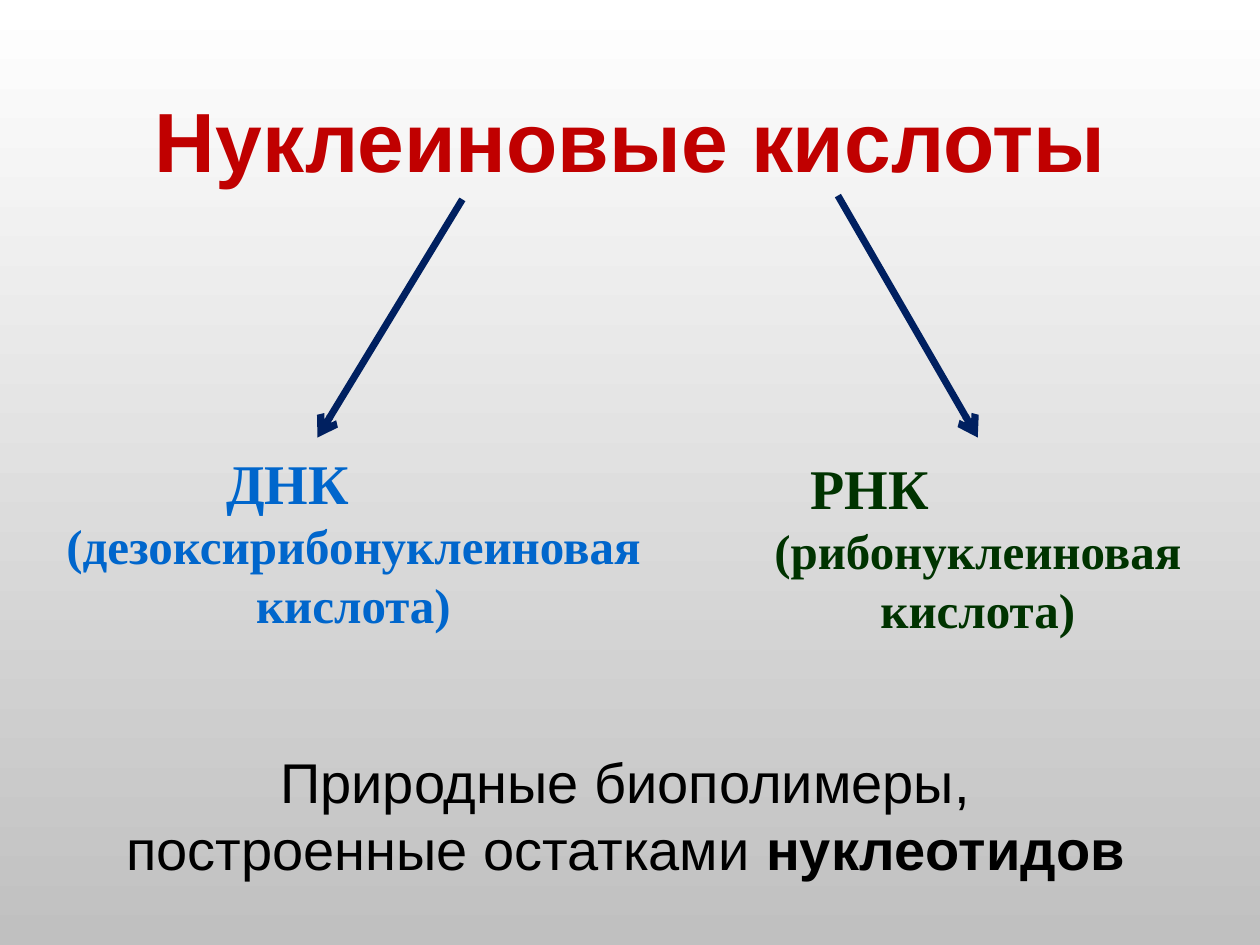
from lxml import etree
from pptx import Presentation
from pptx.dml.color import RGBColor
from pptx.enum.shapes import MSO_CONNECTOR
from pptx.enum.text import MSO_ANCHOR, PP_ALIGN
from pptx.oxml.ns import qn
from pptx.util import Inches, Pt

LINE = MSO_CONNECTOR.STRAIGHT
MID, TOP = MSO_ANCHOR.MIDDLE, MSO_ANCHOR.TOP
CENTER = PP_ALIGN.CENTER
WIDE, HIGH = 10, 7.5
SANS, SERIF = "Arial", "Times New Roman"
HANG = 0.37
HUES = {
    "light": "FFFFFF", "dark": "C0C0C0", "title": "C00000", "arrow": "002060",
    "dna": "0066CC", "rna": "003300", "text": "000000",
}


def color(name):
    return RGBColor.from_string(HUES[name])


def paint(slide):
    fill = slide.background.fill
    fill.gradient()
    fill.gradient_angle = 270
    for stop, name in zip(fill.gradient_stops, ("light", "dark")):
        stop.color.rgb = color(name)


def frame(slide, box, anchor=TOP):
    left, top, width, height = box
    shape = slide.shapes.add_textbox(
        Inches(left * WIDE), Inches(top * HIGH),
        Inches(width * WIDE), Inches(height * HIGH))
    body = shape.text_frame
    body.word_wrap = True
    body.vertical_anchor = anchor
    return body


def center(para, left=0, right=0):
    para.alignment = CENTER
    props = para._p.get_or_add_pPr()
    props.set("marL", str(Inches(left)))
    props.set("marR", str(Inches(right)))
    props.set("indent", "0")


def write(para, text, size, face, hue, bold=True):
    run = para.add_run()
    run.text = text
    font = run.font
    font.size, font.name, font.bold = Pt(size), face, bold
    font.color.rgb = color(hue)


def title(slide, box):
    para = frame(slide, box, MID).paragraphs[0]
    center(para)
    write(para, "Нуклеиновые кислоты", 48, SANS, "title")


def acid(slide, box, short, full, hue, shift):
    body = frame(slide, box)
    head = body.paragraphs[0]
    center(head, right=shift)
    write(head, short, 32, SERIF, hue)
    name = body.add_paragraph()
    center(name, left=HANG)
    write(name, full, 28, SERIF, hue)


def arrow(slide, start, end):
    ends = [Inches(part * size) for point in (start, end)
            for part, size in zip(point, (WIDE, HIGH))]
    link = slide.shapes.add_connector(LINE, *ends)
    link.line.width = Pt(4)
    link.line.color.rgb = color("arrow")
    etree.SubElement(link.line._get_or_add_ln(), qn("a:tailEnd"), type="arrow")
    etree.SubElement(link._element.spPr, qn("a:effectLst"))


def note(slide, box):
    para = frame(slide, box).paragraphs[0]
    center(para)
    write(para, "Природные биополимеры, построенные остатками ",
          32, SANS, "text", False)
    write(para, "нуклеотидов", 32, SANS, "text")


def main():
    deck = Presentation()
    deck.slide_width, deck.slide_height = Inches(WIDE), Inches(HIGH)
    slide = deck.slides.add_slide(deck.slide_layouts[6])
    paint(slide)
    title(slide, (0.063, 0.064, 0.875, 0.167))
    arrow(slide, (0.367, 0.211), (0.252, 0.463))
    arrow(slide, (0.665, 0.207), (0.776, 0.463))
    acid(slide, (0, 0.468, 0.524, 0.211), "ДНК",
         "(дезоксирибонуклеиновая кислота)", "dna", 0.67)
    acid(slide, (0.539, 0.473, 0.437, 0.211), "РНК",
         "(рибонуклеиновая кислота)", "rna", 1.34)
    note(slide, (0.083, 0.784, 0.827, 0.157))
    deck.save("out.pptx")


if __name__ == "__main__":
    main()
